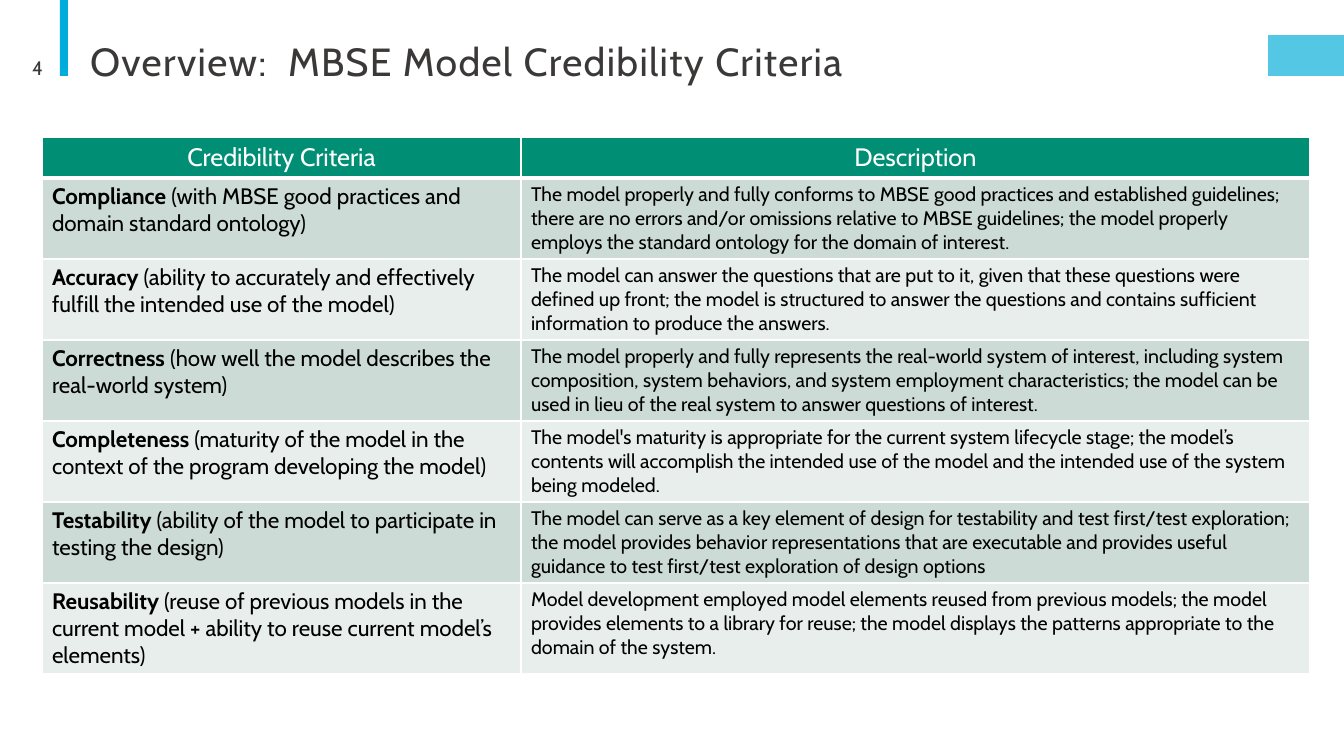
from lxml.etree import SubElement
from pptx import Presentation
from pptx.dml.color import RGBColor
from pptx.enum.shapes import MSO_SHAPE as Shape
from pptx.enum.text import MSO_ANCHOR as Anchor, MSO_AUTO_SIZE as AutoSize, PP_ALIGN as Align
from pptx.oxml.ns import qn
from pptx.util import Pt

EMU_PER_PX = 914400 / 100.8
FONT = "Cabin"
COLORS = {
    "accent": "00ACD9",
    "heading": "3B3838",
    "header": "008E74",
    "band_dark": "CCDBD6",
    "band_light": "E7EEEB",
    "text": "000000",
    "white": "FFFFFF",
}
COLUMN_WIDTHS = [479, 789]
ROW_HEIGHTS = [41] + [81] * 5 + [90]
CRITERIA = [
    ("Compliance", " (with MBSE good practices and domain standard ontology)",
     "The model properly and fully conforms to MBSE good practices and established guidelines; "
     "there are no errors and/or omissions relative to MBSE guidelines; the model properly "
     "employs the standard ontology for the domain of interest."),
    ("Accuracy", " (ability to accurately and effectively fulfill the intended use of the model)",
     "The model can answer the questions that are put to it, given that these questions were "
     "defined up front; the model is structured to answer the questions and contains sufficient "
     "information to produce the answers."),
    ("Correctness", " (how well the model describes the real-world system)",
     "The model properly and fully represents the real-world system of interest, including system "
     "composition, system behaviors, and system employment characteristics; the model can be "
     "used in lieu of the real system to answer questions of interest."),
    ("Completeness", " (maturity of the model in the context of the program developing the model)",
     "The model's maturity is appropriate for the current system lifecycle stage; the model’s "
     "contents will accomplish the intended use of the model and the intended use of the system "
     "being modeled."),
    ("Testability", " (ability of the model to participate in testing the design)",
     "The model can serve as a key element of design for testability and test first/test exploration; "
     "the model provides behavior representations that are executable and provides useful "
     "guidance to test first/test exploration of design options"),
    ("Reusability", " (reuse of previous models in the current model + ability to reuse current model’s elements)",
     "Model development employed model elements reused from previous models; the model "
     "provides elements to a library for reuse; the model displays the patterns appropriate to the "
     "domain of the system."),
]


def px(length):
    return round(length * EMU_PER_PX)


def rgb(name):
    return RGBColor.from_string(COLORS[name])


def add_span(para, text, size, color, bold=False):
    span = para.add_run()
    span.text = text
    for name, value in {"name": FONT, "size": Pt(size), "bold": bold}.items():
        setattr(span.font, name, value)
    span.font.color.rgb = rgb(color)
    return span


def add_block(page, left, top, width, height, opacity=100):
    block = page.shapes.add_shape(Shape.RECTANGLE, px(left), px(top), px(width), px(height))
    block.shadow.inherit = False
    block.fill.solid()
    block.fill.fore_color.rgb = rgb("accent")
    block.line.fill.background()
    if opacity < 100:
        color = block.fill._xPr.find(qn("a:solidFill"))[0]
        SubElement(color, qn("a:alpha"), val=str(opacity * 1000))


def set_title(page, text):
    title = page.shapes.title
    place = {"left": 80, "top": 39, "width": 1109, "height": 62}
    for name, value in place.items():
        setattr(title, name, px(value))
    frame = title.text_frame
    frame.auto_size = AutoSize.NONE
    frame.vertical_anchor = Anchor.TOP
    para = frame.paragraphs[0]
    para.alignment = Align.LEFT
    para.line_spacing = 0.85
    span = add_span(para, text, 28, "heading")
    span.font._element.set("spc", "100")


def add_page_number(page, number):
    box = page.shapes.add_textbox(px(7), px(48), px(46), px(40))
    frame = box.text_frame
    frame.word_wrap = True
    frame.vertical_anchor = Anchor.MIDDLE
    para = frame.paragraphs[0]
    para.alignment = Align.RIGHT
    add_span(para, number, 14, "heading")


def format_cell(cell, fill, bottom_width=1):
    """Give the cell white borders and a solid fill; borders precede the fill in the XML."""
    properties = cell._tc.get_or_add_tcPr()
    for side, width in {"L": 1, "R": 1, "T": 1, "B": bottom_width}.items():
        line = SubElement(properties, qn(f"a:ln{side}"), w=str(Pt(width)))
        paint = SubElement(line, qn("a:solidFill"))
        SubElement(paint, qn("a:srgbClr"), val=COLORS["white"])
    cell.fill.solid()
    cell.fill.fore_color.rgb = rgb(fill)


def add_criteria_table(page):
    frame = page.shapes.add_table(
        len(ROW_HEIGHTS), len(COLUMN_WIDTHS), px(42), px(137),
        px(sum(COLUMN_WIDTHS)), px(sum(ROW_HEIGHTS)))
    table = frame.table
    for column, width in zip(table.columns, COLUMN_WIDTHS):
        column.width = px(width)
    for row, height in zip(table.rows, ROW_HEIGHTS):
        row.height = px(height)

    for cell, heading in zip(table.rows[0].cells, ["Credibility Criteria", "Description"]):
        format_cell(cell, "header", bottom_width=3)
        para = cell.text_frame.paragraphs[0]
        para.alignment = Align.CENTER
        add_span(para, heading, 18, "white")

    for index, (criterion, meaning, description) in enumerate(CRITERIA, start=1):
        cells = table.rows[index].cells
        for cell in cells:
            format_cell(cell, "band_dark" if index % 2 else "band_light")
        criterion_para, description_para = [cell.text_frame.paragraphs[0] for cell in cells]
        add_span(criterion_para, criterion, 16, "text", bold=True)
        add_span(criterion_para, meaning, 16, "text")
        add_span(description_para, description, 14, "text")


def main():
    deck = Presentation()
    deck.slide_width, deck.slide_height = px(1344), px(756)
    page = deck.slides.add_slide(deck.slide_layouts[5])
    add_block(page, 60, 0, 8, 76)
    add_block(page, 1268, 35, 76, 41, opacity=67)
    set_title(page, "Overview:  MBSE Model Credibility Criteria")
    add_page_number(page, "4")
    add_criteria_table(page)
    deck.save("out.pptx")


if __name__ == "__main__":
    main()
